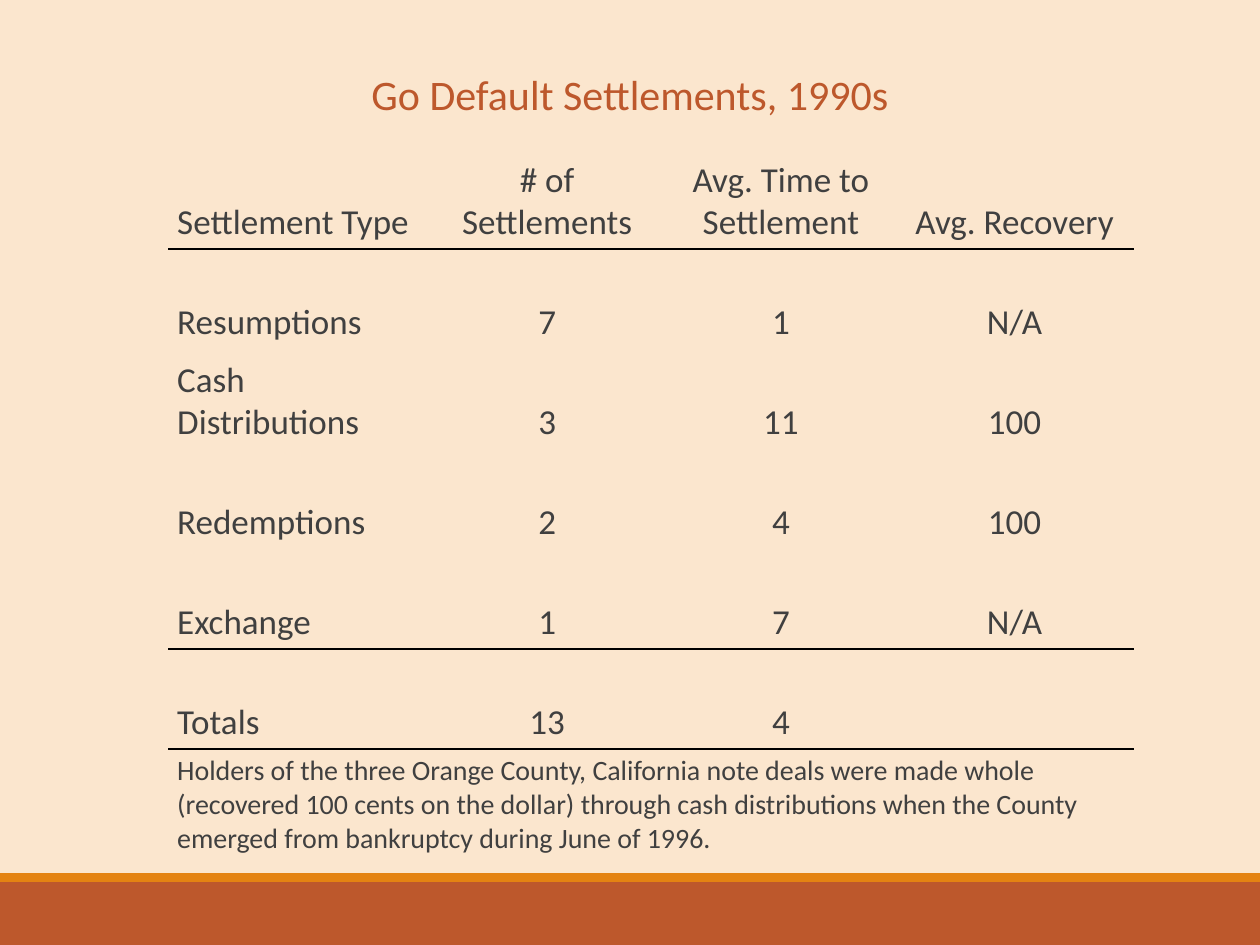
import pptx
import pptx.dml.color
import pptx.enum.shapes
import pptx.enum.text
import pptx.oxml
import pptx.oxml.ns
import pptx.util

Pt = pptx.util.Pt
ALIGN = pptx.enum.text.PP_ALIGN
ANCHOR = pptx.enum.text.MSO_ANCHOR

HEADERS = ["Settlement Type", "# of Settlements", "Avg. Time to Settlement", "Avg. Recovery"]
SETTLEMENTS = [
    ["Resumptions", "7", "1", "N/A"],
    ["Cash Distributions", "3", "11", "100"],
    ["Redemptions", "2", "4", "100"],
    ["Exchange", "1", "7", "N/A"],
]
TOTALS = ["Totals", "13", "4", ""]
FOOTNOTE = (
    "Holders of the three Orange County, California note deals were made whole "
    "(recovered 100 cents on the dollar) through cash distributions when the County "
    "emerged from bankruptcy during June of 1996."
)


def color(value):
    return pptx.dml.color.RGBColor.from_string(value)


class SettlementSlide:
    font = "Calibri"
    background = "FBE6CE"
    rust = "BD582C"
    orange = "E48312"
    ink = "404040"
    rule = "000000"

    def __init__(self, deck):
        self.page = deck.slides.add_slide(deck.slide_layouts[5])
        fill = self.page.background.fill
        fill.solid()
        fill.fore_color.rgb = color(self.background)

    def style(self, para, size, shade, align):
        para.alignment = align
        para.font.name = self.font
        para.font.size = Pt(size)
        para.font.color.rgb = color(shade)

    def band(self, top, height, shade):
        box = self.page.shapes.add_shape(
            pptx.enum.shapes.MSO_SHAPE.RECTANGLE, 0, Pt(top), Pt(720), Pt(height))
        box.shadow.inherit = False
        box.fill.solid()
        box.fill.fore_color.rgb = color(shade)
        box.line.fill.background()

    def title(self, text, left, top, width, height):
        box = self.page.shapes.title
        box.left, box.top, box.width, box.height = Pt(left), Pt(top), Pt(width), Pt(height)
        frame = box.text_frame
        frame.text = text
        frame.vertical_anchor = ANCHOR.TOP
        frame.auto_size = pptx.enum.text.MSO_AUTO_SIZE.NONE
        para = frame.paragraphs[0]
        para.line_spacing = 0.8
        self.style(para, 24, self.rust, ALIGN.CENTER)

    def borders(self, cell, ruled_sides):
        properties = cell._tc.get_or_add_tcPr()
        for side in "LRTB":
            paint = "<a:noFill/>"
            if side in ruled_sides:
                paint = f'<a:solidFill><a:srgbClr val="{self.rule}"/></a:solidFill>'
            properties.append(pptx.oxml.parse_xml(
                f'<a:ln{side} {pptx.oxml.ns.nsdecls("a")} w="{Pt(1)}">{paint}</a:ln{side}>'))

    def cell(self, cell, text, size, align, anchor, ruled_sides):
        cell.text = text
        cell.vertical_anchor = anchor
        cell.margin_left = cell.margin_right = Pt(5.3)
        cell.margin_top = cell.margin_bottom = Pt(2.65)
        self.style(cell.text_frame.paragraphs[0], size, self.ink, align)
        self.borders(cell, ruled_sides)
        cell.fill.background()

    def table(self, rows, footnote, ruled_rows, left, top, widths, heights):
        table = self.page.shapes.add_table(
            len(heights), len(widths), Pt(left), Pt(top),
            Pt(sum(widths)), Pt(sum(heights))).table
        table.first_row = table.horz_banding = False
        for column, width in zip(table.columns, widths):
            column.width = Pt(width)
        for row, height in zip(table.rows, heights):
            row.height = Pt(height)

        # A ruled row shares its bottom line with the row below
        lines = rows + [[footnote] + [""] * (len(widths) - 1)]
        for r, texts in enumerate(lines):
            sides = ("T" if r - 1 in ruled_rows else "") + ("B" if r in ruled_rows else "")
            is_note = r == len(rows)
            for c, text in enumerate(texts):
                self.cell(table.cell(r, c), text, 16 if is_note else 20,
                          ALIGN.CENTER if c else ALIGN.LEFT,
                          ANCHOR.TOP if is_note else ANCHOR.BOTTOM, sides)
        last = len(rows)
        table.cell(last, 0).merge(table.cell(last, len(widths) - 1))


def main():
    deck = pptx.Presentation()
    deck.slide_width, deck.slide_height = Pt(720), Pt(540)
    slide = SettlementSlide(deck)

    # Footer bands
    slide.band(504, 36, slide.rust)
    slide.band(499, 5, slide.orange)

    # Title and settlement table
    slide.title("Go Default Settlements, 1990s", 96, 41, 528, 31)
    slide.table([HEADERS, *SETTLEMENTS, TOTALS], FOOTNOTE, ruled_rows={0, 4, 5},
                left=96, top=84, widths=[148.3, 136.8, 130.3, 136.8],
                heights=[58.3] + [57.15] * 5 + [64])

    deck.save("out.pptx")


if __name__ == "__main__":
    main()
